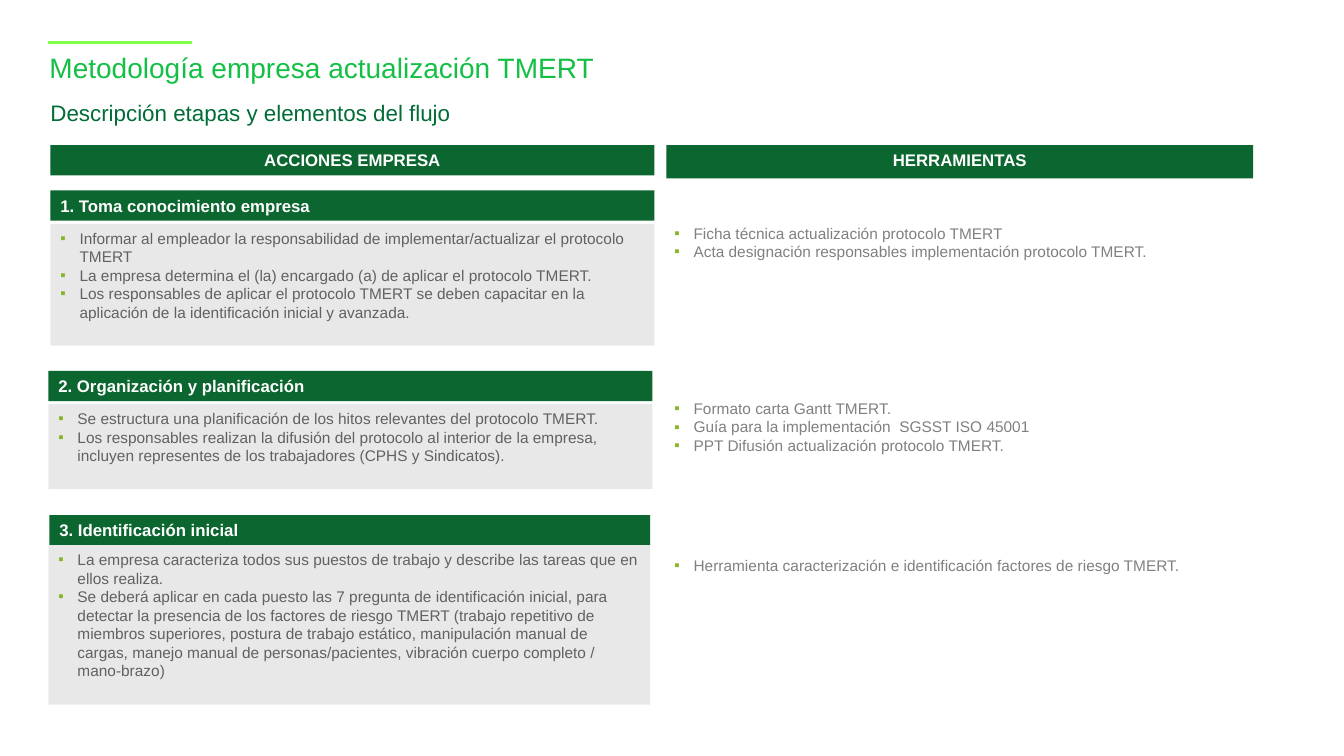
from lxml.etree import SubElement
from pptx import Presentation
from pptx.dml.color import RGBColor
from pptx.enum.shapes import MSO_CONNECTOR, MSO_SHAPE
from pptx.enum.text import MSO_ANCHOR, MSO_AUTO_SIZE, PP_ALIGN
from pptx.oxml.ns import qn
from pptx.util import Inches, Pt

BRIGHT = RGBColor(0x13, 0xC0, 0x45)
LIME = RGBColor(0x7E, 0xFF, 0x45)
DEEP = RGBColor(0x00, 0x6D, 0x36)
GREEN = RGBColor(0x0C, 0x66, 0x2F)
PALE = RGBColor(0xE8, 0xE8, 0xE8)
WHITE = RGBColor(0xFF, 0xFF, 0xFF)
DARK = RGBColor(0x61, 0x61, 0x61)
GRAY = RGBColor(0x80, 0x80, 0x80)
CELL = Inches(0.1)

deck = Presentation()
deck.slide_width = Inches(13.33)
deck.slide_height = Inches(7.5)
slide = deck.slides.add_slide(deck.slide_layouts[1])


def style(shape, lines, size, color, bold=False, align=PP_ALIGN.LEFT, mark=None):
    frame = shape.text_frame
    frame.text = "\n".join(lines)
    frame.word_wrap = True
    frame.auto_size = MSO_AUTO_SIZE.NONE
    frame.vertical_anchor = MSO_ANCHOR.TOP
    for para in frame.paragraphs:
        para.alignment = align
        para.space_before = Pt(0)
        props = para._p.get_or_add_pPr()
        props.set("marL", str(Inches(0.19) if mark else 0))
        props.set("indent", str(-Inches(0.19) if mark else 0))
        if mark:
            tint = SubElement(SubElement(props, qn("a:buClr")), qn("a:srgbClr"))
            tint.set("val", "83B727")
            SubElement(props, qn("a:buFont")).set("typeface", "Arial")
            SubElement(props, qn("a:buChar")).set("char", mark)
        else:
            SubElement(props, qn("a:buNone"))
        for run in para.runs:
            run.font.name = "Arial"
            run.font.size = Pt(size)
            run.font.bold = bold
            run.font.color.rgb = color


def block(col, row, wide, high, fill, lines, size, color, **look):
    box = slide.shapes.add_shape(
        MSO_SHAPE.RECTANGLE, *(int(n * CELL) for n in (col, row, wide, high)))
    box.shadow.inherit = False
    box.fill.solid()
    box.fill.fore_color.rgb = fill
    box.line.fill.background()
    style(box, lines, size, color, **look)


heads = [
    (slide.shapes.title, "Metodología empresa actualización TMERT", 4.9, 5.4, 20, BRIGHT),
    (slide.placeholders[1], "Descripción etapas y elementos del flujo", 5, 10.1, 16, DEEP),
]
for holder, text, col, row, size, color in heads:
    holder.left, holder.top = int(col * CELL), int(row * CELL)
    holder.width, holder.height = int(91.3 * CELL), int(3.8 * CELL)
    style(holder, [text], size, color)
    frame = holder.text_frame
    frame.margin_left = frame.margin_right = 0
    frame.margin_top = frame.margin_bottom = 0
    frame.paragraphs[0].line_spacing = 0.9

rule = slide.shapes.add_connector(
    MSO_CONNECTOR.STRAIGHT, *(int(n * CELL) for n in (4.8, 4.2, 19, 4.2)))
rule.line.color.rgb = LIME
rule.line.width = Pt(1.75)
SubElement(rule._element.spPr, qn("a:effectLst"))

for text, col, wide, high in [("ACCIONES EMPRESA", 5, 59.9, 3),
                              ("HERRAMIENTAS", 66.1, 58.2, 3.3)]:
    block(col, 14.4, wide, high, GREEN, [text], 12, WHITE,
          bold=True, align=PP_ALIGN.CENTER)

stages = [
    ("1. Toma conocimiento empresa", (5, 18.9, 59.9, 3), (5, 22.2, 59.9, 12.1), [
        "Informar al empleador la responsabilidad de implementar/actualizar el protocolo TMERT",
        "La empresa determina el (la) encargado (a) de aplicar el protocolo TMERT.",
        "Los responsables de aplicar el protocolo TMERT se deben capacitar en la "
        "aplicación de la identificación inicial y avanzada.",
    ], (65.9, 21.7, 63, 4.7), [
        "Ficha técnica actualización protocolo TMERT",
        "Acta designación responsables implementación protocolo TMERT.",
    ]),
    ("2. Organización y planificación", (4.8, 36.8, 59.9, 3), (4.8, 40.1, 59.9, 8.4), [
        "Se estructura una planificación de los hitos relevantes del protocolo TMERT.",
        "Los responsables realizan la difusión del protocolo al interior de la empresa, "
        "incluyen representes de los trabajadores (CPHS y Sindicatos).",
    ], (65.9, 39.1, 58.2, 6.6), [
        "Formato carta Gantt TMERT.",
        "Guía para la implementación  SGSST ISO 45001",
        "PPT Difusión actualización protocolo TMERT.",
    ]),
    ("3. Identificación inicial", (4.9, 51.1, 59.6, 3), (4.8, 54.1, 59.7, 15.8), [
        "La empresa caracteriza todos sus puestos de trabajo y describe las tareas "
        "que en ellos realiza.",
        "Se deberá aplicar en cada puesto las 7 pregunta de identificación inicial, "
        "para detectar la presencia de los factores de riesgo TMERT (trabajo repetitivo "
        "de miembros superiores, postura de trabajo estático, manipulación manual de "
        "cargas, manejo manual de personas/pacientes, vibración cuerpo completo / "
        "mano-brazo)",
    ], (65.9, 54.7, 58.2, 2.9), [
        "Herramienta caracterización e identificación factores de riesgo TMERT.",
    ]),
]
for name, head, body, acts, side, tools in stages:
    block(*head, GREEN, [name], 12, WHITE, bold=True)
    block(*body, PALE, acts, 11, DARK, mark="▪")
    block(*side, WHITE, tools, 11, GRAY, mark="▪")

deck.save("out.pptx")
